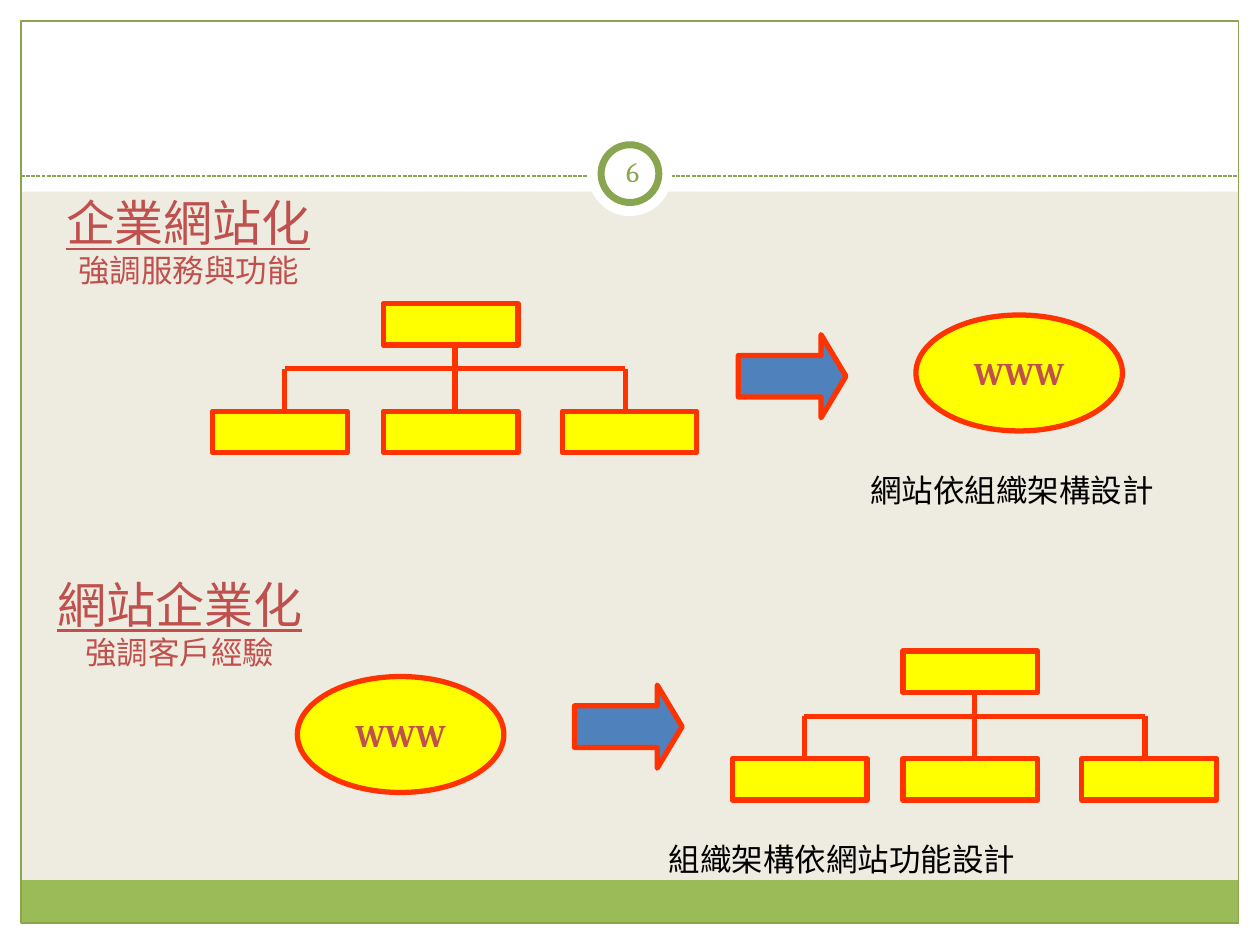
import pptx
import pptx.util
import pptx.dml.color
import pptx.enum.dml
import pptx.enum.shapes
import pptx.enum.text
import pptx.oxml

Pt = pptx.util.Pt
Kind = pptx.enum.shapes.MSO_SHAPE
Align = pptx.enum.text.PP_ALIGN
Anchor = pptx.enum.text.MSO_ANCHOR
tone = {
    "paper": "EEECE1", "white": "FFFFFF", "green": "9BBB59", "olive": "89A54F",
    "yellow": "FFFF00", "orange": "FF3300", "blue": "4F81BD", "red": "C0504D",
    "black": "000000",
}
color = {name: pptx.dml.color.RGBColor.from_string(code) for name, code in tone.items()}

deck = pptx.Presentation()
deck.slide_width, deck.slide_height = Pt(720), Pt(540)
slide = deck.slides.add_slide(deck.slide_layouts[6])
slide.background.fill.solid()
slide.background.fill.fore_color.rgb = color["paper"]


def draw(kind, box, fill=None, edge=None, weight=3):
    shape = slide.shapes.add_shape(kind, *map(Pt, box))
    shape.shadow.inherit = False
    if fill:
        shape.fill.solid()
        shape.fill.fore_color.rgb = color[fill]
    else:
        shape.fill.background()
    if edge:
        shape.line.color.rgb = color[edge]
        shape.line.width = Pt(weight)
    else:
        shape.line.fill.background()
    return shape


def link(ends, edge="orange", weight=3):
    line = slide.shapes.add_connector(
        pptx.enum.shapes.MSO_CONNECTOR.STRAIGHT, *map(Pt, ends))
    line.line.color.rgb = color[edge]
    line.line.width = Pt(weight)
    props = line._element.spPr
    props.append(pptx.oxml.parse_xml(
        '<a:effectLst xmlns:a="http://schemas.openxmlformats.org/drawingml/2006/main"/>'))
    return line


for box, fill in [
    ((0, 527.75, 720, 12.25), "white"),
    ((0, 0, 720, 109.5), "white"),
    ((0, 0, 12, 540), "white"),
    ((708, 0, 12, 540), "white"),
    ((11.75, 503, 695.75, 24.5), "green"),
]:
    draw(Kind.RECTANGLE, box, fill)
draw(Kind.RECTANGLE, (12, 12, 695.75, 515.5), None, "olive", 0.75)
rule = link((12, 100.6, 708, 100.6), "olive", 0.75)
rule.line.dash_style = pptx.enum.dml.MSO_LINE.SQUARE_DOT
draw(Kind.OVAL, (336, 75.5, 48, 48), "white")
draw(Kind.OVAL, (343.5, 82.75, 33, 33), "white", "olive", 4)

for left, top in [(121.5, 173.5), (418.5, 372)]:
    stems = [left + step for step in (41.2, 138.5, 235.8)]
    bus, base = top + 37.25, top + 61.5
    for x, start in zip(stems, (bus, top + 20, bus)):
        link((x, start, x, base + 2))
    link((stems[0], bus, stems[-1], bus))
    for step, y in [(97.5, top), (0, base), (97.5, base), (199.75, base)]:
        draw(Kind.RECTANGLE, (left + step, y, 77, 23.75), "yellow", "orange")

web = {"size": Pt(18), "bold": True}
head = {"size": Pt(28), "underline": True}
note = {"size": Pt(18)}
texts = []
for x, y in [(523.4, 180), (169.9, 386.6)]:
    oval = draw(Kind.OVAL, (x, y, 118, 66.25), "yellow", "orange")
    texts.append((oval, Align.CENTER, Anchor.MIDDLE, "red", [("WWW", web)]))
for x, y in [(421.9, 191.25), (328.3, 391.5)]:
    arrow = draw(Kind.RIGHT_ARROW, (x, y, 61.5, 47.5), "blue", "orange")
    arrow.adjustments[0], arrow.adjustments[1] = 0.5, 0.3

for box, align, anchor, ink, lines in [
    ((343.5, 80.6, 36, 34.5), Align.CENTER, Anchor.MIDDLE, "olive",
     [("6", {"size": Pt(16)})]),
    ((16.6, 106.5, 182, 65), Align.CENTER, Anchor.TOP, "red",
     [("企業網站化", head), ("強調服務與功能", note)]),
    ((23.8, 324.7, 157.7, 65), Align.CENTER, Anchor.TOP, "red",
     [("網站企業化", head), ("強調客戶經驗", note)]),
    ((490.3, 265.7, 196, 29), Align.LEFT, Anchor.TOP, "black",
     [("網站依組織架構設計", note)]),
    ((375.1, 476.6, 278, 34), Align.LEFT, Anchor.TOP, "black",
     [("組織架構依網站功能設計", note)]),
]:
    label = slide.shapes.add_textbox(*map(Pt, box))
    texts.append((label, align, anchor, ink, lines))

for holder, align, anchor, ink, lines in texts:
    frame = holder.text_frame
    frame.word_wrap = True
    frame.vertical_anchor = anchor
    for place, (words, style) in enumerate(lines):
        para = frame.add_paragraph() if place else frame.paragraphs[0]
        para.alignment = align
        run = para.add_run()
        run.text = words
        run.font.color.rgb = color[ink]
        for key, value in {"name": "Cambria", **style}.items():
            setattr(run.font, key, value)

deck.save("out.pptx")
